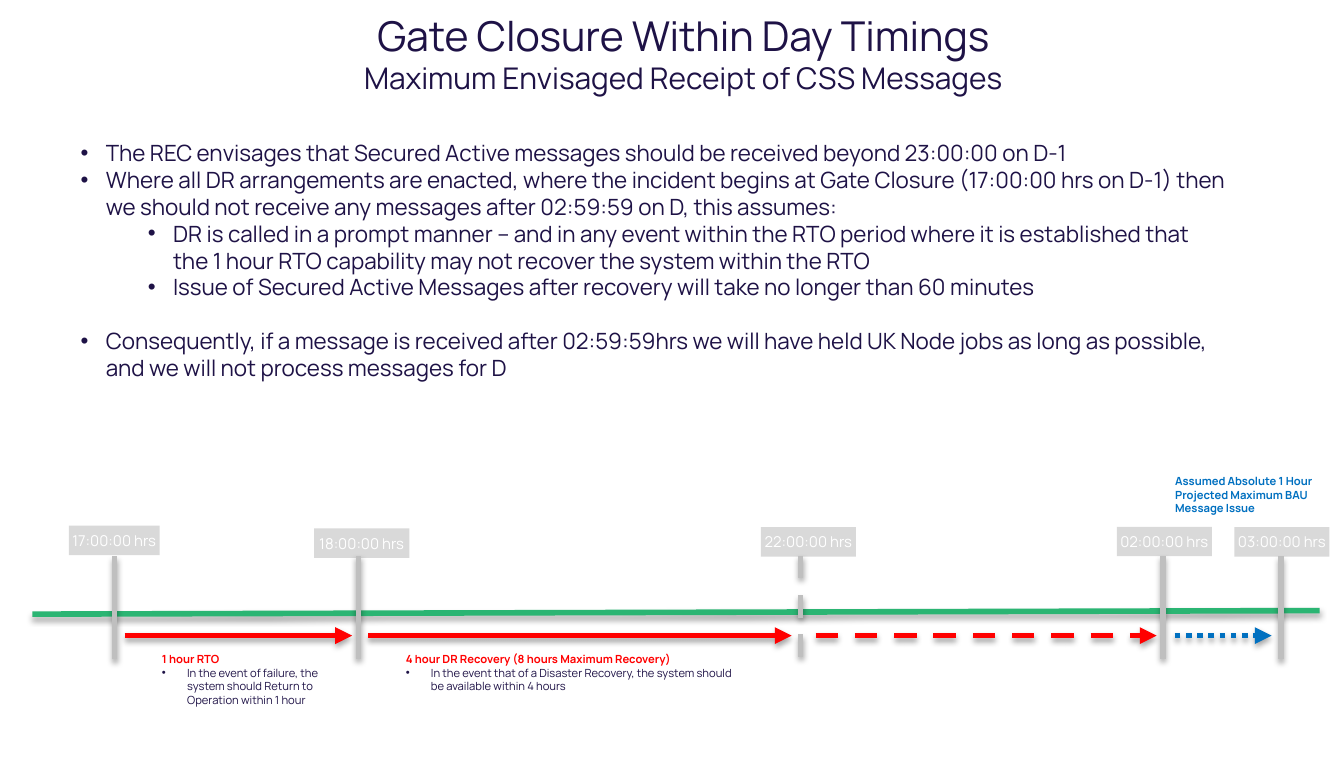
from lxml.etree import SubElement
from pptx import Presentation
from pptx.dml.color import RGBColor
from pptx.enum.dml import MSO_LINE
from pptx.enum.shapes import MSO_CONNECTOR, MSO_SHAPE
from pptx.enum.text import MSO_ANCHOR, MSO_AUTO_SIZE, PP_ALIGN
from pptx.oxml.ns import qn
from pptx.util import Pt

INK = {"navy": "1E1246", "green": "2BB573", "grey": "BFBFBF", "box": "D9D9D9",
       "red": "FF0000", "blue": "0070C0", "white": "FFFFFF", "black": "000000"}
HEAD = [("Gate Closure Within Day Timings", 22),
        ("Maximum Envisaged Receipt of CSS Messages", 16)]
BODY = [
    (0, 0, "The REC envisages that Secured Active messages should be received beyond 23:00:00 on D-1"),
    (0, 0, "Where all DR arrangements are enacted, where the incident begins at Gate Closure "
           "(17:00:00 hrs on D-1) then we should not receive any messages after 02:59:59 on D, this assumes:"),
    (1, 0, "DR is called in a prompt manner – and in any event within the RTO period where it is "
           "established that the 1 hour RTO capability may not recover the system within the RTO"),
    (1, 0, "Issue of Secured Active Messages after recovery will take no longer than 60 minutes"),
    (0, 14.4, "Consequently, if a message is received after 02:59:59hrs we will have held UK Node jobs "
              "as long as possible, and we will not process messages for D"),
]
MARKS = [("17:00:00 hrs", 61.4, 297.9, 36.9, 281.5, 48.6, None),
         ("18:00:00 hrs", 192.1, 297.6, 168.3, 283, 51, None),
         ("22:00:00 hrs", 428.9, 296.6, 407.6, 282.3, 51, MSO_LINE.DASH),
         ("02:00:00 hrs", 623, 297.6, 598.3, 282.1, 51, None),
         ("03:00:00 hrs", 686.2, 297.9, 661.2, 282.3, 51, None)]
SPANS = [(66.8, 188.6, "red", None), (197.3, 424.1, "red", None),
         (437, 619.6, "red", MSO_LINE.DASH),
         (629.3, 681.3, "blue", MSO_LINE.ROUND_DOT)]
NOTES = [
    (79.7, 346, 105.8, 36, "red", "1 hour RTO",
     "In the event of failure, the system should Return to Operation within 1 hour"),
    (210.3, 346, 190, 28.8, "red", "4 hour DR Recovery (8 hours Maximum Recovery)",
     "In the event that of a Disaster Recovery, the system should be available within 4 hours"),
    (622.5, 250.5, 105.8, 28.8, "blue",
     "Assumed Absolute 1 Hour Projected Maximum BAU Message Issue", None),
]


def place(shape, x, y, w, h):
    """Set the position and size of a shape."""
    shape.left, shape.top, shape.width, shape.height = Pt(x), Pt(y), Pt(w), Pt(h)


def write(frame, text, size, tint, bold=False):
    """Write the next paragraph of a frame and return it."""
    para = frame.paragraphs[0]
    if para.text:
        para = frame.add_paragraph()
    para.text = text
    para.space_before = Pt(0)
    font = para.font
    font.name, font.size, font.bold = "Manrope", Pt(size), bold
    font.color.rgb = RGBColor.from_string(INK[tint])
    return para


def bullet(para, left):
    """Give a paragraph a hanging round bullet."""
    props = para._p.get_or_add_pPr()
    props.set("marL", str(Pt(left)))
    props.set("indent", str(-Pt(13.5)))
    face = SubElement(props, qn("a:buFont"), typeface="Arial")
    face.addnext(props.makeelement(qn("a:buChar"), char="•"))
    props.append(props.find(qn("a:defRPr")))


def line(slide, start, end, tint, dash=None, arrow=False):
    """Draw a thick shadowed line, with an arrowhead if asked."""
    link = slide.shapes.add_connector(MSO_CONNECTOR.STRAIGHT, *map(Pt, start + end))
    link.line.color.rgb = RGBColor.from_string(INK[tint])
    link.line.width = Pt(3)
    if dash:
        link.line.dash_style = dash
    props = link._element.spPr
    if arrow:
        SubElement(props.find(qn("a:ln")), qn("a:tailEnd"), type="triangle")
    shade = SubElement(SubElement(props, qn("a:effectLst")), qn("a:outerShdw"),
                       blurRad=str(Pt(3.1)), dist=str(Pt(1.8)), dir="5400000", rotWithShape="0")
    hue = SubElement(shade, qn("a:srgbClr"), val=INK["black"])
    SubElement(hue, qn("a:alpha"), val="35000")


def label(slide, text, x, y, w):
    """Draw a grey box that holds a time."""
    box = slide.shapes.add_shape(MSO_SHAPE.RECTANGLE, Pt(x), Pt(y), Pt(w), Pt(15.8))
    box.shadow.inherit = False
    box.fill.solid()
    box.fill.fore_color.rgb = RGBColor.from_string(INK["box"])
    box.line.fill.background()
    frame = box.text_frame
    frame.margin_left = frame.margin_right = frame.margin_top = frame.margin_bottom = 0
    frame.word_wrap = False
    frame.vertical_anchor = MSO_ANCHOR.MIDDLE
    write(frame, text, 8, "white").alignment = PP_ALIGN.CENTER


def note(slide, x, y, w, h, tint, head, text):
    """Add a small heading with an optional bullet below."""
    frame = slide.shapes.add_textbox(Pt(x), Pt(y), Pt(w), Pt(h)).text_frame
    frame.word_wrap = True
    write(frame, head, 6, tint, True)
    if text:
        bullet(write(frame, text, 6, "navy"), 13.5)


def fill_text(slide):
    """Fill the title and body placeholders."""
    title, body = slide.shapes.title, slide.placeholders[1]
    place(title, 12.2, 2.2, 707.8, 53.3)
    place(body, 36, 70.9, 629.3, 306)
    for shape in (title, body):
        shape.text_frame.auto_size = MSO_AUTO_SIZE.NONE
        shape.text_frame.vertical_anchor = MSO_ANCHOR.TOP
    for text, size in HEAD:
        write(title.text_frame, text, size, "navy").alignment = PP_ALIGN.CENTER
    for level, gap, text in BODY:
        para = write(body.text_frame, text, 12, "navy")
        para.level, para.space_before = level, Pt(gap)
        bullet(para, 13.5 + 36 * level)


def main():
    """Build the slide and save it."""
    deck = Presentation()
    deck.slide_width, deck.slide_height = Pt(720), Pt(405.38)
    slide = deck.slides.add_slide(deck.slide_layouts[1])
    fill_text(slide)
    line(slide, (17.3, 328.9), (707, 327), "green")
    for text, tick, top, x, y, w, dash in MARKS:
        label(slide, text, x, y, w)
        line(slide, (tick, top + 55.2), (tick, top), "grey", dash)
    for start, end, tint, dash in SPANS:
        line(slide, (start, 340.4), (end, 340.4), tint, dash, True)
    for item in NOTES:
        note(slide, *item)
    deck.save("out.pptx")


if __name__ == "__main__":
    main()
